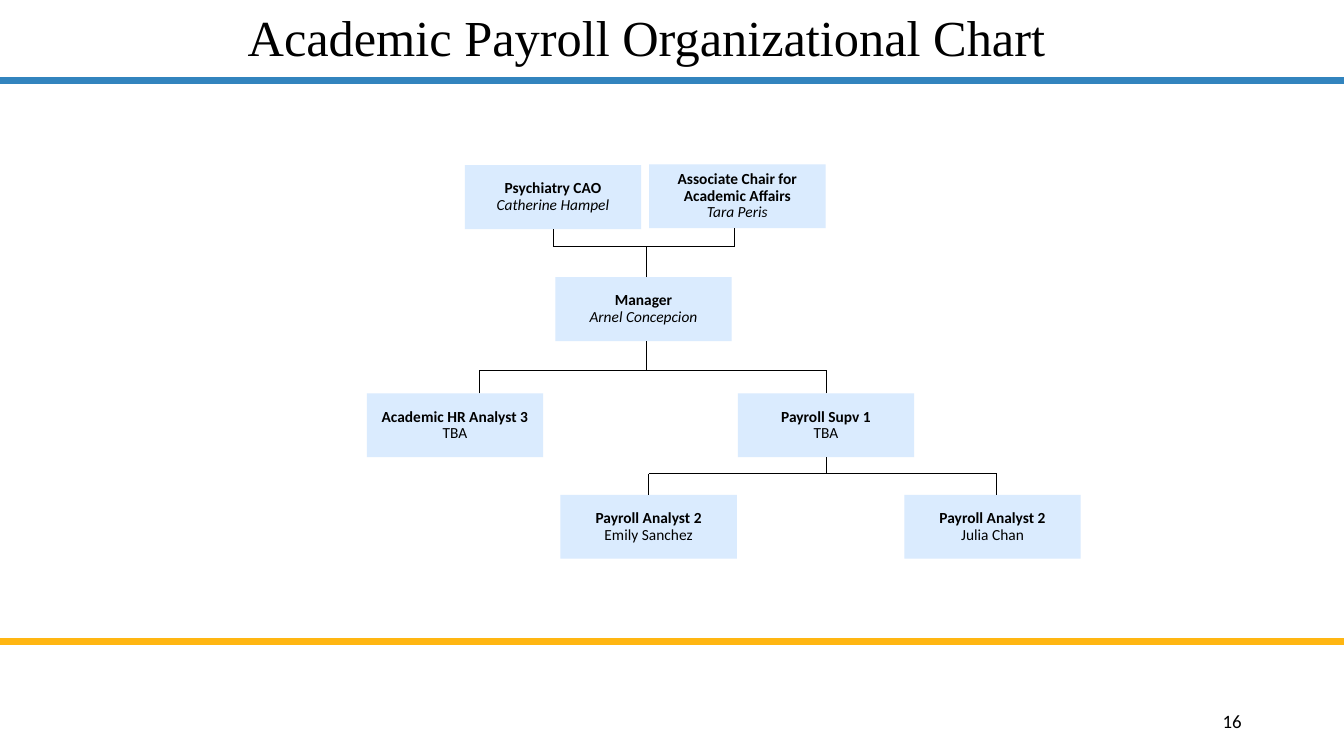
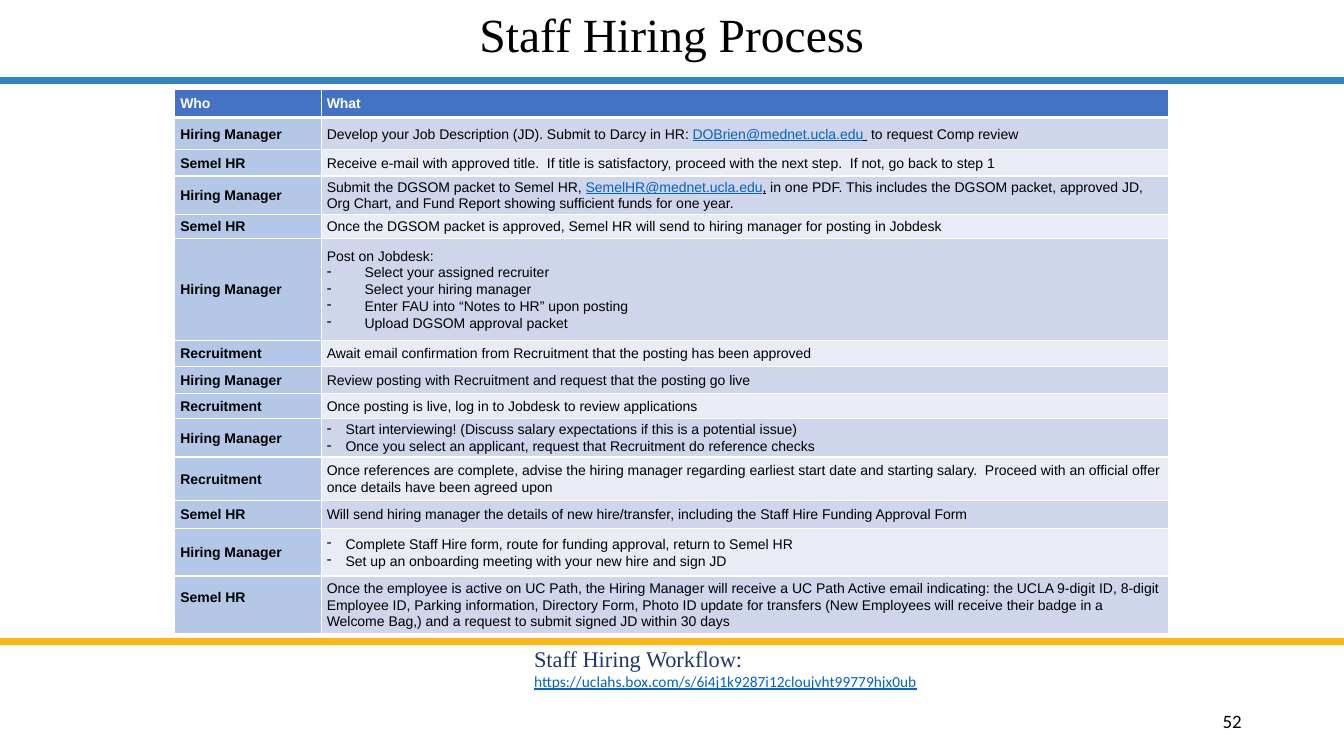
from dataclasses import dataclass

from lxml.etree import SubElement
from pptx import Presentation
from pptx.dml.color import RGBColor
from pptx.enum.shapes import MSO_CONNECTOR, MSO_SHAPE
from pptx.enum.text import MSO_ANCHOR, MSO_AUTO_SIZE, PP_ALIGN
from pptx.oxml import parse_xml
from pptx.oxml.ns import nsdecls, qn
from pptx.util import Pt


@dataclass(frozen=True)
class Theme:
    black: str = "000000"
    white: str = "FFFFFF"
    blue_band: str = "3284BE"
    gold_band: str = "FFB612"
    org_box: str = "DAEBFE"
    header: str = "4472C4"
    who: str = "B4C7E7"
    stripes: tuple = ("CFD5EA", "E9EBF5")
    link: str = "0563C1"
    navy: str = "203864"
    serif: str = "Times New Roman"
    sans: str = "Calibri"
    table: str = "Arial"
    org_size: float = 11
    table_size: float = 10
    number_size: float = 13.5
    workflow_size: float = 16
    link_size: float = 11


THEME = Theme()
SLIDE_W, SLIDE_H = 960, 540
BANDS = [(57.6, THEME.blue_band), (458, THEME.gold_band)]

# Organizational chart: key -> (left, top, role, person, person in italics)
ORG_W, ORG_H = 126, 45.6
ORG = {
    "cao": (332, 118, "Psychiatry CAO", "Catherine Hampel", True),
    "chair": (463.7, 117.4, "Associate Chair for Academic Affairs", "Tara Peris", True),
    "manager": (396.7, 198, "Manager", "Arnel Concepcion", True),
    "hr": (262, 281, "Academic HR Analyst 3", "TBA", False),
    "supervisor": (527, 281, "Payroll Supv 1", "TBA", False),
    "emily": (400.3, 353.5, "Payroll Analyst 2", "Emily Sanchez", False),
    "julia": (646, 353.5, "Payroll Analyst 2", "Julia Chan", False),
}
TOP, BOTTOM = 0, 2
# Each bus: height, then its drops as (box, side, distance from the side's middle)
BUSES = [
    (176, [("cao", BOTTOM, 0), ("chair", BOTTOM, -2), ("manager", TOP, 2)]),
    (264.4, [("manager", BOTTOM, 2), ("hr", TOP, 17.5), ("supervisor", TOP, 0)]),
    (338.4, [("supervisor", BOTTOM, 0), ("emily", TOP, 0), ("julia", TOP, 3)]),
]

# Hiring steps: who, row height, bullet indent, paragraphs.
# A paragraph is a string or a list of (text, style) runs.
PLAIN, LINK, LINED = {}, {"color": THEME.link, "underline": True}, {"underline": True}
MANAGER, SEMEL, RECRUITMENT = "Hiring Manager", "Semel HR", "Recruitment"
STEPS = [
    (MANAGER, 23, 0, [[
        ("Develop your Job Description (JD). Submit to Darcy in HR: ", PLAIN),
        ("DOBrien@mednet.ucla.edu", LINK), (" ", LINED),
        (" to request Comp review", PLAIN)]]),
    (SEMEL, 18.7, 0, ["Receive e-mail with approved title.  If title is satisfactory, "
                      "proceed with the next step.  If not, go back to step 1"]),
    (MANAGER, 27.4, 0, [[
        ("Submit the DGSOM packet to Semel HR, ", PLAIN),
        ("SemelHR@mednet.ucla.edu", LINK), (",", LINED),
        (" in one PDF. This includes the DGSOM packet, approved JD, Org Chart, "
         "and Fund Report showing sufficient funds for one year.", PLAIN)]]),
    (SEMEL, 17.3, 0, ["Once the DGSOM packet is approved, Semel HR will send to hiring "
                      "manager for posting in Jobdesk"]),
    (MANAGER, 72.7, 27, ["Post on Jobdesk:",
                         "Select your assigned recruiter",
                         "Select your hiring manager",
                         "Enter FAU into “Notes to HR” upon posting",
                         "Upload DGSOM approval packet"]),
    (RECRUITMENT, 18.7, 0, ["Await email confirmation from Recruitment that the posting "
                            "has been approved"]),
    (MANAGER, 19.4, 0, ["Review posting with Recruitment and request that the posting go live"]),
    (RECRUITMENT, 18, 0, ["Once posting is live, log in to Jobdesk to review applications"]),
    (MANAGER, 27.4, 13.5, [
        "Start interviewing! (Discuss salary expectations if this is a potential issue)",
        "Once you select an applicant, request that Recruitment do reference checks"]),
    (RECRUITMENT, 31, 0, [
        "Once references are complete, advise the hiring manager regarding earliest start "
        "date and starting salary.  Proceed with an official offer once details have been "
        "agreed upon"]),
    (SEMEL, 20.2, 0, ["Will send hiring manager the details of new hire/transfer, including "
                      "the Staff Hire Funding Approval Form"]),
    (MANAGER, 33.8, 13.5, [
        "Complete Staff Hire form, route for funding approval, return to Semel HR",
        "Set up an onboarding meeting with your new hire and sign JD"]),
    (SEMEL, 41, 0, [
        "Once the employee is active on UC Path, the Hiring Manager will receive a UC Path "
        "Active email indicating: the UCLA 9-digit ID, 8-digit Employee ID, Parking "
        "information, Directory Form, Photo ID update for transfers (New Employees will "
        "receive their badge in a Welcome Bag,) and a request to submit signed JD within "
        "30 days"]),
]
HEADINGS, HEADING_H = ("Who", "What"), 20.2
COLUMNS = (104.6, 605.4)
TABLE_LEFT, TABLE_TOP = 124.8, 63.8
WORKFLOW = ("Staff Hiring Workflow:",
            "https://uclahs.box.com/s/6i4j1k9287i12cloujvht99779hjx0ub")


def rgb(color):
    return RGBColor.from_string(color)


def add_run(paragraph, text, font, size, color=THEME.black,
            bold=False, italic=False, underline=False):
    run = paragraph.add_run()
    run.text = text
    run.font.name, run.font.size = font, Pt(size)
    run.font.bold, run.font.italic, run.font.underline = bold, italic, underline
    run.font.color.rgb = rgb(color)


def add_line(slide, start, end, color, width):
    line = slide.shapes.add_connector(
        MSO_CONNECTOR.STRAIGHT, *(Pt(value) for value in (*start, *end)))
    line.line.color.rgb = rgb(color)
    line.line.width = Pt(width)
    SubElement(line._element.spPr, qn("a:effectLst"))
    return line


def add_text_frame(slide, left, top, width, height):
    frame = slide.shapes.add_textbox(Pt(left), Pt(top), Pt(width), Pt(height)).text_frame
    frame.word_wrap = True
    return frame


def start_slide(deck, title, size, place, number):
    """Add a slide with its title, the two bands and the page number."""
    slide = deck.slides.add_slide(deck.slide_layouts[5])
    for y, color in BANDS:
        add_line(slide, (0, y), (SLIDE_W, y), color, 5)
    heading = slide.shapes.title
    heading.left, heading.top, heading.width, heading.height = (Pt(v) for v in place)
    frame = heading.text_frame
    frame.auto_size, frame.word_wrap = MSO_AUTO_SIZE.NONE, True
    frame.vertical_anchor = MSO_ANCHOR.MIDDLE
    paragraph = frame.paragraphs[0]
    paragraph.alignment, paragraph.line_spacing = PP_ALIGN.CENTER, 0.9
    add_run(paragraph, title, THEME.serif, size)

    page = add_text_frame(slide, 678, 500.4, 216, 28.8)
    page.vertical_anchor = MSO_ANCHOR.MIDDLE
    page.paragraphs[0].alignment = PP_ALIGN.RIGHT
    add_run(page.paragraphs[0], number, THEME.sans, THEME.number_size)
    return slide


def add_org_box(slide, left, top, role, person, italic):
    box = slide.shapes.add_shape(MSO_SHAPE.RECTANGLE, Pt(left), Pt(top), Pt(ORG_W), Pt(ORG_H))
    box.shadow.inherit = False
    box.fill.solid()
    box.fill.fore_color.rgb = rgb(THEME.org_box)
    box.line.fill.background()
    frame = box.text_frame
    frame.word_wrap, frame.vertical_anchor = True, MSO_ANCHOR.MIDDLE
    frame.margin_left = frame.margin_right = frame.margin_top = frame.margin_bottom = Pt(0.7)
    paragraph = frame.paragraphs[0]
    paragraph.alignment, paragraph.line_spacing = PP_ALIGN.CENTER, 0.9
    add_run(paragraph, role, THEME.sans, THEME.org_size, bold=True)
    paragraph.add_line_break()
    add_run(paragraph, person, THEME.sans, THEME.org_size, italic=italic)
    return box


def add_bus(slide, boxes, y, drops):
    """Draw a horizontal line and the drops that tie it to its boxes."""
    ends = []
    for key, side, offset in drops:
        left, top = ORG[key][:2]
        x = left + ORG_W / 2 + offset
        edge = top if side == TOP else top + ORG_H
        drop = add_line(slide, (x, edge), (x, y), THEME.black, 0.5)
        if offset == 0:
            drop.begin_connect(boxes[key], side)
        ends.append(x)
    add_line(slide, (min(ends), y), (max(ends), y), THEME.black, 0.5)


def set_borders(cell, top=1, bottom=1):
    properties = cell._tc.get_or_add_tcPr()
    sides = (("L", 1), ("R", 1), ("T", top), ("B", bottom))
    for position, (side, width) in enumerate(sides):
        properties.insert(position, parse_xml(
            f'<a:ln{side} {nsdecls("a")} w="{Pt(width)}"><a:solidFill>'
            f'<a:srgbClr val="{THEME.white}"/></a:solidFill></a:ln{side}>'))


def add_bullet(paragraph, indent):
    properties = paragraph._p.get_or_add_pPr()
    properties.set("marL", str(Pt(indent)))
    properties.set("indent", str(-Pt(indent)))
    SubElement(properties, qn("a:buChar")).set("char", "-")


def fill_cell(cell, paragraphs, fill, indent=0, **style):
    cell.fill.solid()
    cell.fill.fore_color.rgb = rgb(fill)
    cell.vertical_anchor = MSO_ANCHOR.MIDDLE
    cell.margin_left = cell.margin_right = Pt(4)
    cell.margin_top = cell.margin_bottom = 0
    frame = cell.text_frame
    for index, runs in enumerate(paragraphs):
        paragraph = frame.add_paragraph() if index else frame.paragraphs[0]
        paragraph.line_spacing = 1.07
        introduces_list = index == 0 and paragraphs[0].endswith(":") if indent else True
        if not introduces_list:
            add_bullet(paragraph, indent)
        for text, run_style in [(runs, PLAIN)] if isinstance(runs, str) else runs:
            add_run(paragraph, text, THEME.table, THEME.table_size, **style, **run_style)


def add_steps_table(slide):
    heights = [HEADING_H] + [step[1] for step in STEPS]
    table = slide.shapes.add_table(
        len(heights), len(COLUMNS), Pt(TABLE_LEFT), Pt(TABLE_TOP),
        Pt(sum(COLUMNS)), Pt(sum(heights))).table
    for column, width in zip(table.columns, COLUMNS):
        column.width = Pt(width)
    for row, height in zip(table.rows, heights):
        row.height = Pt(height)
    for column, heading in enumerate(HEADINGS):
        cell = table.cell(0, column)
        fill_cell(cell, [heading], THEME.header, color=THEME.white, bold=True)
        set_borders(cell, bottom=3)
    for row, (who, _, indent, what) in enumerate(STEPS, start=1):
        fill_cell(table.cell(row, 0), [who], THEME.who, bold=True)
        fill_cell(table.cell(row, 1), what, THEME.stripes[(row - 1) % 2], indent)
        for column in range(len(COLUMNS)):
            set_borders(table.cell(row, column), top=3 if row == 1 else 1)
    table.cell(len(STEPS), 0).margin_bottom = Pt(11)


def build_org_chart(deck):
    slide = start_slide(deck, "Academic Payroll Organizational Chart", 36,
                        (116, -8.6, 692, 74.9), "16")
    boxes = {key: add_org_box(slide, *entry) for key, entry in ORG.items()}
    for y, drops in BUSES:
        add_bus(slide, boxes, y, drops)


def build_hiring_process(deck):
    slide = start_slide(deck, "Staff Hiring Process", 34, (271.4, -19.4, 417, 91.4), "52")
    add_steps_table(slide)
    label, address = WORKFLOW
    frame = add_text_frame(slide, 374.4, 457.2, 427, 40.3)
    add_run(frame.paragraphs[0], label, THEME.serif, THEME.workflow_size, THEME.navy)
    add_run(frame.add_paragraph(), address, THEME.sans, THEME.link_size, **LINK)


def main():
    deck = Presentation()
    deck.slide_width, deck.slide_height = Pt(SLIDE_W), Pt(SLIDE_H)
    build_org_chart(deck)
    build_hiring_process(deck)
    deck.save("out.pptx")


if __name__ == "__main__":
    main()
